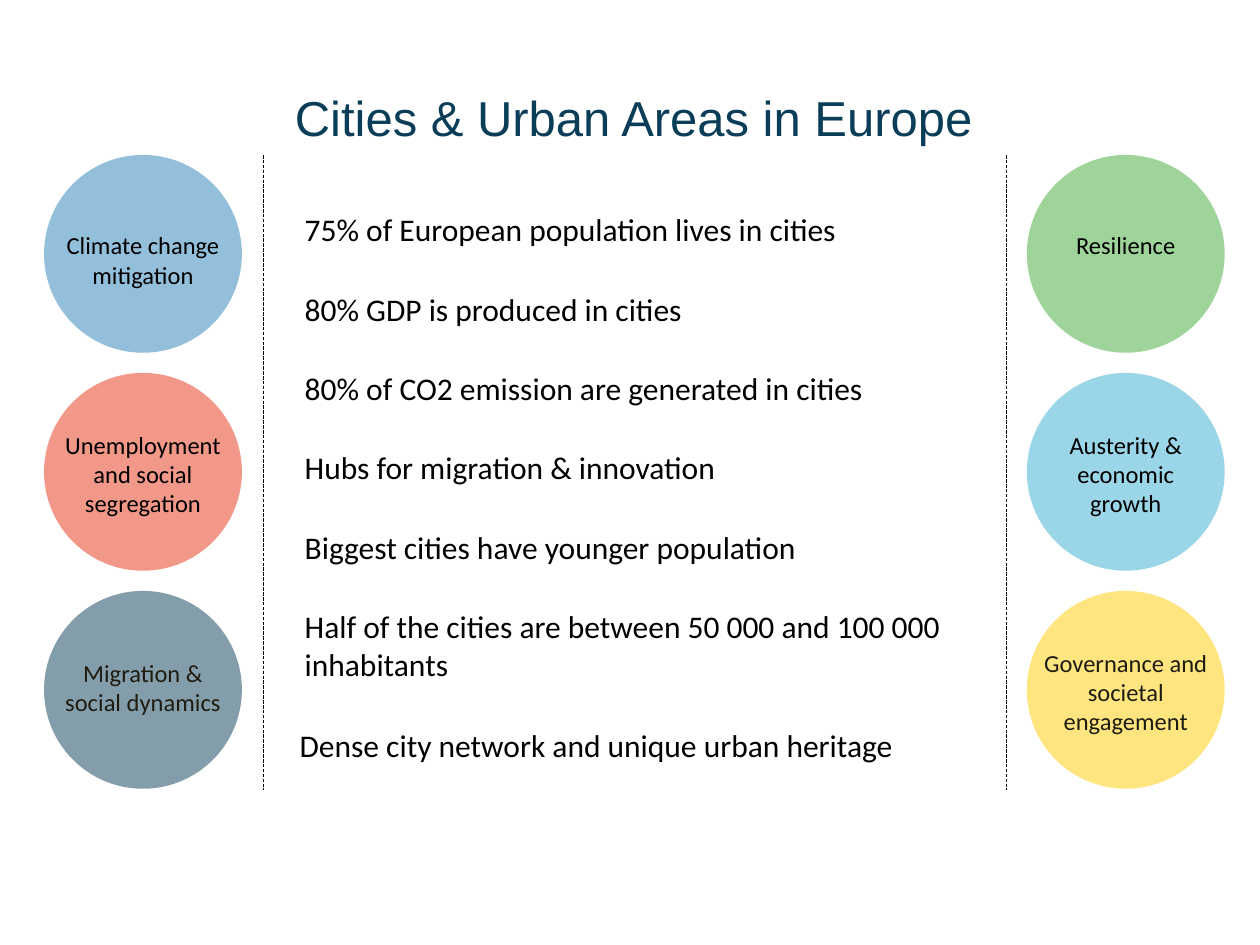
from lxml import etree
from pptx import Presentation
from pptx.dml.color import RGBColor
from pptx.enum.dml import MSO_LINE
from pptx.enum.shapes import MSO_CONNECTOR, MSO_SHAPE
from pptx.enum.text import MSO_ANCHOR, PP_ALIGN
from pptx.oxml.ns import qn
from pptx.util import Inches, Pt

LEFT, CENTER = PP_ALIGN.LEFT, PP_ALIGN.CENTER
TOP, MIDDLE = MSO_ANCHOR.TOP, MSO_ANCHOR.MIDDLE
OVAL, STRAIGHT, LONG_DASH = MSO_SHAPE.OVAL, MSO_CONNECTOR.STRAIGHT, MSO_LINE.LONG_DASH

COLORS = {
    "navy": "093D58", "blue": "2A81B8", "red": "E63312", "green": "3EAB35",
    "sky": "9AD5E8", "yellow": "FFCC00", "black": "000000", "charcoal": "1E1C11",
}

TITLE = "Cities & Urban Areas in Europe"
# text, left, width, number of lines
STATEMENTS = [
    ("75% of European population lives in cities", 2.32, 5, 1),
    ("80% GDP is produced in cities", 2.32, 5.28, 1),
    ("80% of CO2 emission are generated in cities", 2.32, 5.28, 1),
    ("Hubs for migration & innovation", 2.32, 5.67, 1),
    ("Biggest cities have younger population", 2.32, 5.47, 1),
    ("Half of the cities are between 50 000 and 100 000 inhabitants", 2.32, 5.67, 2),
    ("Dense city network and unique urban heritage", 2.28, 5.47, 1),
]
# column left -> (label, fill, opacity %, text color, label offset, label height)
CHALLENGES = {
    0.35: [
        ("Climate change mitigation", "blue", 50, "black", 0.55, 0.81),
        ("Unemployment and social segregation", "red", 50, "black", 0.4, 0.81),
        ("Migration & social dynamics", "navy", 50, "charcoal", 0.48, 0.57),
    ],
    8.15: [
        ("Resilience", "green", 50, "black", 0.55, 0.34),
        ("Austerity & economic growth", "sky", 100, "black", 0.4, 0.81),
        ("Governance and societal engagement", "yellow", 50, "charcoal", 0.4, 0.81),
    ],
}
DIVIDERS = [2.09, 7.99]

STATEMENT_TOP, STATEMENT_PITCH, LINE_HEIGHT = 1.62, 0.63, 0.31
CIRCLE_TOP, CIRCLE_PITCH, DIAMETER = 1.23, 1.73, 1.57
DIVIDER_BOTTOM = 6.27


def color(name):
    return RGBColor.from_string(COLORS[name])


def write(shape, text, size=18, font="Calibri", ink="black", align=LEFT, anchor=TOP):
    frame = shape.text_frame
    frame.word_wrap = True
    frame.vertical_anchor = anchor
    paragraph = frame.paragraphs[0]
    paragraph.alignment = align
    run = paragraph.add_run()
    run.text = text
    run.font.size = Pt(size)
    run.font.name = font
    run.font.color.rgb = color(ink)


def add_text(shapes, text, left, top, width, height, **style):
    box = shapes.add_textbox(Inches(left), Inches(top), Inches(width), Inches(height))
    write(box, text, **style)


def add_challenge(slide, left, top, label, fill, opacity, ink, offset, height):
    """Group a circle with the label that lies over it."""
    shapes = slide.shapes.add_group_shape().shapes
    circle = shapes.add_shape(
        OVAL, Inches(left), Inches(top), Inches(DIAMETER), Inches(DIAMETER))
    circle.shadow.inherit = False
    circle.fill.solid()
    circle.fill.fore_color.rgb = color(fill)
    circle.line.fill.background()
    if opacity < 100:
        fill_color = circle.fill._xPr.find(qn("a:solidFill"))[0]
        etree.SubElement(fill_color, qn("a:alpha"), val=str(opacity * 1000))
    add_text(shapes, label, left, top + offset, DIAMETER, height,
             size=14, ink=ink, align=CENTER)


def add_divider(slide, left):
    line = slide.shapes.add_connector(
        STRAIGHT, Inches(left), Inches(CIRCLE_TOP), Inches(left), Inches(DIVIDER_BOTTOM))
    line.line.color.rgb = color("black")
    line.line.width = Pt(0.25)
    line.line.dash_style = LONG_DASH
    etree.SubElement(line._element.spPr, qn("a:effectLst"))


def main():
    presentation = Presentation()
    presentation.slide_width, presentation.slide_height = Inches(10), Inches(7.5)
    slide = presentation.slides.add_slide(presentation.slide_layouts[5])

    title = slide.shapes.title
    title.left, title.top = Inches(2.24), Inches(0.3)
    title.width, title.height = Inches(7.26), Inches(1.25)
    write(title, TITLE, size=28, font="Arial", ink="navy", anchor=MIDDLE)

    top = STATEMENT_TOP
    for text, left, width, lines in STATEMENTS:
        extra = (lines - 1) * LINE_HEIGHT
        add_text(slide.shapes, text, left, top, width, 0.4 + extra)
        top += STATEMENT_PITCH + extra

    for left, challenges in CHALLENGES.items():
        for row, challenge in enumerate(challenges):
            add_challenge(slide, left, CIRCLE_TOP + row * CIRCLE_PITCH, *challenge)

    for left in DIVIDERS:
        add_divider(slide, left)

    presentation.save("out.pptx")


if __name__ == "__main__":
    main()
